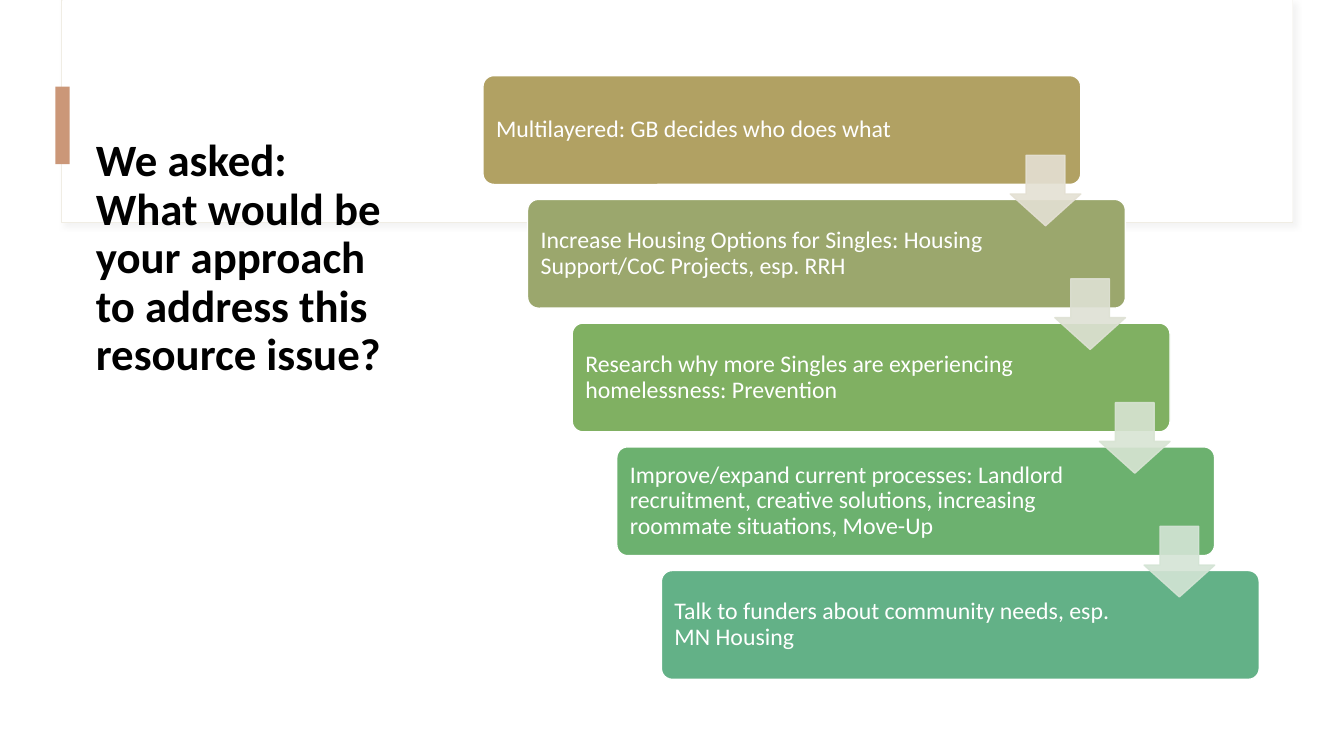
import dataclasses

import pptx
import pptx.dml.color
import pptx.enum.shapes
import pptx.enum.text
import pptx.oxml
import pptx.oxml.ns
import pptx.util
from pptx.util import Inches

SHAPE = pptx.enum.shapes.MSO_SHAPE


@dataclasses.dataclass(frozen=True)
class Theme:
    font: str = "Calibri"
    title_size: int = 32
    step_size: int = 17
    title_color: str = "000000"
    white: str = "FFFFFF"
    frame_line: str = "F0EDE4"
    frame_shadow: str = "D9D9D9"
    accent: str = "CB9778"
    steps: tuple = ("B1A163", "9BA76D", "80B062", "6CB16F", "63B187")
    arrows: tuple = ("E4E0D3", "DEE1D4", "D8E4D3", "D4E4D5")


def rgb(color):
    return pptx.dml.color.RGBColor.from_string(color)


def write_text(frame, text, *, font, size, color, bold=False, insets=(0.1, 0.05, 0.1, 0.05)):
    """Fill a text frame with one left-aligned, vertically centred paragraph."""
    frame.word_wrap = True
    frame.auto_size = pptx.enum.text.MSO_AUTO_SIZE.NONE
    frame.vertical_anchor = pptx.enum.text.MSO_ANCHOR.MIDDLE
    frame.margin_left, frame.margin_top, frame.margin_right, frame.margin_bottom = map(Inches, insets)
    paragraph = frame.paragraphs[0]
    paragraph.alignment = pptx.enum.text.PP_ALIGN.LEFT
    paragraph.line_spacing = 0.9
    run = paragraph.add_run()
    run.text = text
    run.font.name = font
    run.font.size = pptx.util.Pt(size)
    run.font.bold = bold
    run.font.color.rgb = rgb(color)


class SlideBuilder:
    def __init__(self, slide, theme):
        self.slide = slide
        self.theme = theme

    def block(self, kind, box, fill, line=None, line_width=1, adjustments=()):
        shape = self.slide.shapes.add_shape(kind, *map(Inches, box))
        shape.shadow.inherit = False
        shape.fill.solid()
        shape.fill.fore_color.rgb = rgb(fill)
        if line:
            shape.line.color.rgb = rgb(line)
            shape.line.width = pptx.util.Pt(line_width)
        else:
            shape.line.fill.background()
        for index, value in enumerate(adjustments):
            shape.adjustments[index] = value
        return shape

    def frame(self, box):
        frame = self.block(SHAPE.RECTANGLE, box, self.theme.white, self.theme.frame_line, 0.75)
        effects = frame._element.spPr.find(pptx.oxml.ns.qn("a:effectLst"))
        effects.append(pptx.oxml.parse_xml(
            f'<a:outerShdw {pptx.oxml.ns.nsdecls("a")} blurRad="50800" dist="38100" dir="2700000">'
            f'<a:srgbClr val="{self.theme.frame_shadow}"><a:alpha val="30000"/></a:srgbClr>'
            '</a:outerShdw>'))

    def title(self, text, box):
        title = self.slide.shapes.title
        title.left, title.top, title.width, title.height = map(Inches, box)
        write_text(title.text_frame, text, font=self.theme.font, size=self.theme.title_size,
                   color=self.theme.title_color, bold=True, insets=(0.1, 0.05, 0.12, 0.05))
        # Bring the title in front of the frame
        self.slide.shapes._spTree.append(title._element)

    def step(self, text, box, fill):
        step = self.block(SHAPE.ROUNDED_RECTANGLE, box, fill, self.theme.white, adjustments=(0.1,))
        write_text(step.text_frame, text, font=self.theme.font, size=self.theme.step_size,
                   color=self.theme.white, insets=(0.1, 0.1, 1.25, 0.1))

    def arrow(self, box, color):
        arrow = self.block(SHAPE.DOWN_ARROW, box, color, color, adjustments=(0.55, 0.45))
        # Slight transparency on fill and outline
        for color_element in arrow._element.spPr.iter(pptx.oxml.ns.qn("a:srgbClr")):
            color_element.append(pptx.oxml.parse_xml(
                f'<a:alpha {pptx.oxml.ns.nsdecls("a")} val="90000"/>'))


STEPS = (
    "Multilayered: GB decides who does what",
    "Increase Housing Options for Singles: Housing Support/CoC Projects, esp. RRH",
    "Research why more Singles are experiencing homelessness: Prevention",
    "Improve/expand current processes: Landlord recruitment, creative solutions, "
    "increasing roommate situations, Move-Up",
    "Talk to funders about community needs, esp. MN Housing",
)


def main():
    presentation = pptx.Presentation()
    presentation.slide_width = Inches(13.33)
    presentation.slide_height = Inches(7.5)
    theme = Theme()
    builder = SlideBuilder(presentation.slides.add_slide(presentation.slide_layouts[5]), theme)

    # Background frame and accent bar
    builder.frame((0.61, 0, 12.21, 2.21))
    builder.block(SHAPE.RECTANGLE, (0.62, 0, 12.2, 2.2), theme.white)
    builder.block(SHAPE.RECTANGLE, (0.55, 0.86, 0.14, 0.77), theme.accent)

    # Question
    builder.title("We asked: What would be your approach to address this resource issue?",
                  (0.85, 0.8, 3.11, 3.54))

    # Staircase of answers, from first to last corner
    first_left, first_top, last_left, last_top = 4.79, 0.75, 6.56, 5.66
    gaps = len(STEPS) - 1
    corners = [(first_left + (last_left - first_left) * i / gaps,
                first_top + (last_top - first_top) * i / gaps) for i in range(len(STEPS))]
    for text, (left, top), fill in zip(STEPS, corners, theme.steps):
        builder.step(text, (left, top, 5.93, 1.08), fill)

    # Arrows leading to the next answer
    for (left, top), color in zip(corners, theme.arrows):
        builder.arrow((left + 5.23, top + 0.79, 0.7, 0.7), color)

    presentation.save("out.pptx")


if __name__ == "__main__":
    main()
